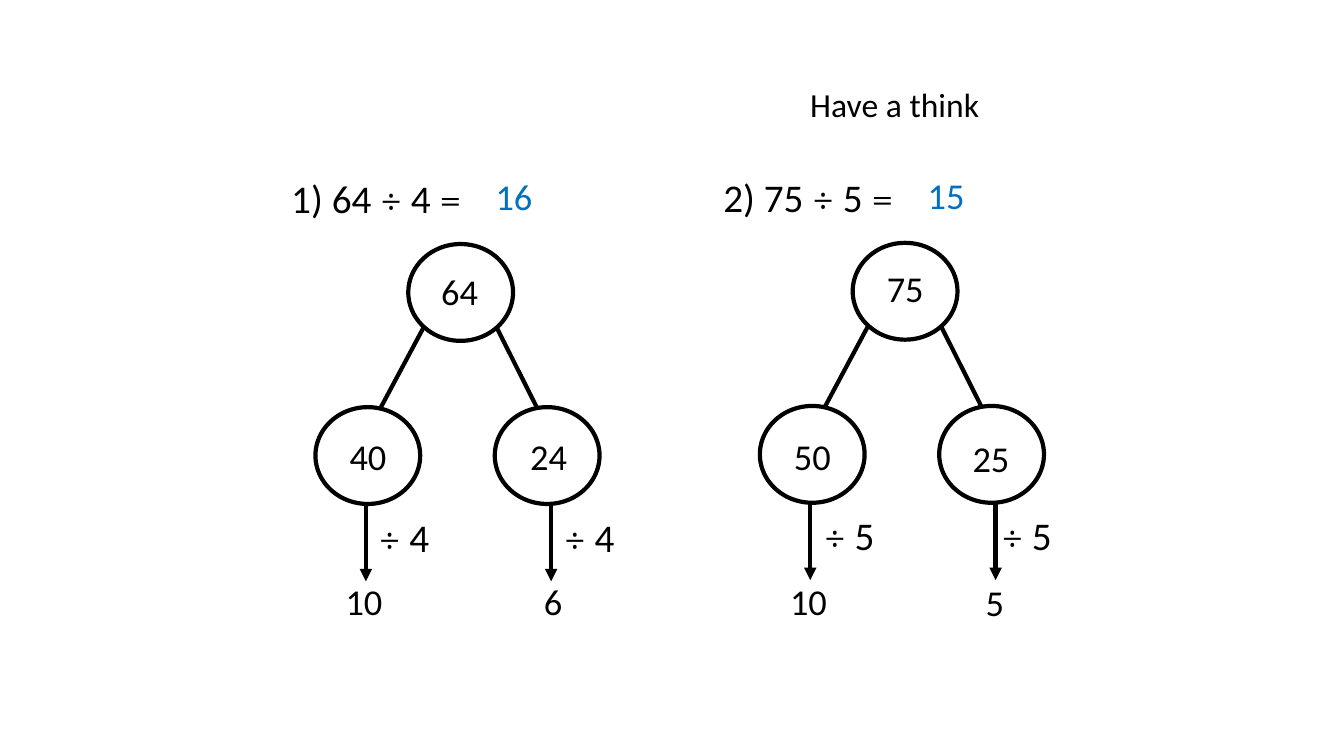
from lxml import etree
from pptx import Presentation
from pptx import util as u
from pptx.dml import color
from pptx.enum import shapes, text
from pptx.oxml import ns

COLORS = {"ink": "000000", "paper": "FFFFFF", "answer": "0070C0"}
CIRCLE_W, CIRCLE_H = 2.64, 2.44
NUMBER_W, NUMBER_H = 1.73, 1.37

# Offsets in cm from the top left of each problem's tree
CIRCLES = [(2.34, 0), (0, 4.11), (4.52, 4.11)]
BRANCHES = [(2.72, 2.11, 1.65, 4.11), (4.57, 2.11, 5.59, 4.14)]
ARROW_XS = (1.27, 5.94)
ARROW_TOP, ARROW_BOTTOM = 6.58, 8.5
DIVISOR_TOP = 6.65

PROBLEMS = [
    dict(left=7.95, top=6.15, number=1, divisor=4, answer=16, equation_dx=-0.86,
         parts=[(64, 2.92, 0.51), (40, 0.61, 4.67), (24, 5.16, 4.67)],
         divisor_xs=(1.35, 6.02),
         quotients=[(10, 0.51, 8.31), (6, 5.51, 8.31)]),
    dict(left=19.15, top=6.12, number=2, divisor=5, answer=15, equation_dx=-1.17,
         parts=[(75, 2.95, 0.46), (50, 0.61, 4.7), (25, 5.11, 4.75)],
         divisor_xs=(1.37, 5.84),
         quotients=[(10, 0.51, 8.36), (5, 5.44, 8.38)]),
]


def rgb(name):
    return color.RGBColor.from_string(COLORS[name])


def add_label(parent, left, top, width, height, runs, size, ink="ink"):
    label = parent.add_textbox(u.Cm(left), u.Cm(top), u.Cm(width), u.Cm(height))
    frame = label.text_frame
    frame.word_wrap = True
    frame.auto_size = text.MSO_AUTO_SIZE.SHAPE_TO_FIT_TEXT
    for words, font in runs:
        run = frame.paragraphs[0].add_run()
        run.text = words
        run.font.name = font
        run.font.size = u.Pt(size)
        run.font.color.rgb = rgb(ink)


def add_number(parent, value, left, top, ink="ink"):
    add_label(parent, left, top, NUMBER_W, NUMBER_H,
              [(str(value), "Calibri")], 26, ink)


def add_line(parent, x1, y1, x2, y2, arrow=False):
    line = parent.add_connector(shapes.MSO_CONNECTOR.STRAIGHT,
                                u.Cm(x1), u.Cm(y1), u.Cm(x2), u.Cm(y2))
    line.line.color.rgb = rgb("ink")
    line.line.width = u.Pt(3)
    if arrow:
        etree.SubElement(line.line._get_or_add_ln(), ns.qn("a:tailEnd"),
                         type="triangle")
    etree.SubElement(line._element.spPr, ns.qn("a:effectLst"))


def add_tree(slide, left, top, parts):
    tree = slide.shapes.add_group_shape().shapes
    for dx, dy in CIRCLES:
        circle = tree.add_shape(shapes.MSO_SHAPE.OVAL, u.Cm(left + dx), u.Cm(top + dy),
                                u.Cm(CIRCLE_W), u.Cm(CIRCLE_H))
        circle.shadow.inherit = False
        circle.fill.solid()
        circle.fill.fore_color.rgb = rgb("paper")
        circle.line.color.rgb = rgb("ink")
        circle.line.width = u.Pt(3)
    for x1, y1, x2, y2 in BRANCHES:
        add_line(tree, left + x1, top + y1, left + x2, top + y2)
    for value, dx, dy in parts:
        add_number(tree, value, left + dx, top + dy)


def add_equation(slide, left, top, number, whole, divisor, answer):
    runs = [(f"{number}) {whole} ", "Calibri"), ("÷", "Cambria"),
            (f" {divisor} ", "Calibri"), ("=", "Cambria")]
    add_label(slide.shapes, left, top, 5.46, 1.45, runs, 28)
    add_number(slide.shapes, answer, left + 5.15, top, "answer")


def add_divisions(slide, left, top, divisor, divisor_xs, quotients):
    for arrow_x, divisor_x in zip(ARROW_XS, divisor_xs):
        add_line(slide.shapes, left + arrow_x, top + ARROW_TOP,
                 left + arrow_x, top + ARROW_BOTTOM, arrow=True)
        add_label(slide.shapes, left + divisor_x, top + DIVISOR_TOP, 1.98, 1.45,
                  [("÷", "Cambria"), (f" {divisor}", "Calibri")], 28)
    for value, dx, dy in quotients:
        add_number(slide.shapes, value, left + dx, top + dy)


def add_problem(slide, left, top, number, divisor, answer, equation_dx,
                parts, divisor_xs, quotients):
    add_tree(slide, left, top, parts)
    add_equation(slide, left + equation_dx, top - 1.88, number, parts[0][0],
                 divisor, answer)
    add_divisions(slide, left, top, divisor, divisor_xs, quotients)


def main():
    deck = Presentation()
    deck.slide_width, deck.slide_height = u.Cm(33.87), u.Cm(19.05)
    slide = deck.slides.add_slide(deck.slide_layouts[6])

    # Heading
    add_label(slide.shapes, 20.17, 1.98, 5.82, 1.27, [("Have a think", "Calibri")], 24)

    # Two division problems
    for problem in PROBLEMS:
        add_problem(slide, **problem)

    deck.save("out.pptx")


if __name__ == "__main__":
    main()
